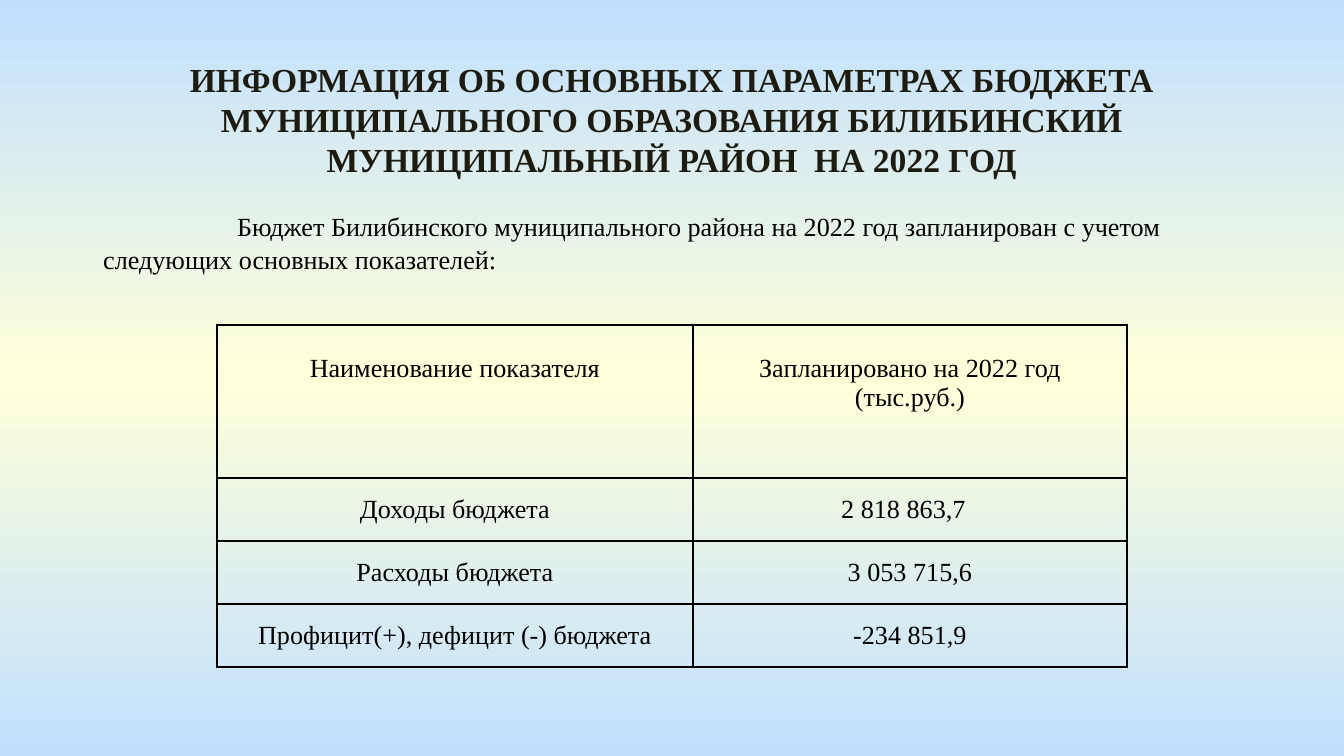
from collections import namedtuple
from dataclasses import dataclass

from lxml.etree import SubElement
from pptx import Presentation
from pptx.dml.color import RGBColor
from pptx.enum.shapes import MSO_SHAPE as Shape
from pptx.enum.text import MSO_ANCHOR as Anchor, PP_ALIGN as Align
from pptx.oxml.ns import qn
from pptx.util import Emu, Pt

Box = namedtuple("Box", "left top width height")


@dataclass(frozen=True)
class Theme:
    """Colours, font and type sizes of the deck."""
    font: str = "Times New Roman"
    sky: str = "C1E0FF"
    cream: str = "FFFFD9"
    title_ink: str = "1E1C11"
    ink: str = "000000"
    title_size: float = 18
    title_leading: float = 21.4
    body_size: float = 14
    body_leading: float = 17.5
    rule: float = 1


THEME = Theme()
EMU_PER_PX = 914400 / 134.4
TITLE = ("ИНФОРМАЦИЯ ОБ ОСНОВНЫХ ПАРАМЕТРАХ БЮДЖЕТА МУНИЦИПАЛЬНОГО ОБРАЗОВАНИЯ "
         "БИЛИБИНСКИЙ МУНИЦИПАЛЬНЫЙ РАЙОН  НА 2022 ГОД")
INTRO = ("Бюджет Билибинского муниципального района на 2022 год запланирован "
         "с учетом следующих основных показателей:")
ROWS = [
    ("Наименование показателя", "Запланировано на 2022 год (тыс.руб.)"),
    ("Доходы бюджета", "2 818 863,7"),
    ("Расходы бюджета", "3 053 715,6"),
    ("Профицит(+), дефицит (-) бюджета", "-234 851,9"),
]


def px(length):
    """Turn pixels into EMU."""
    return Emu(round(length * EMU_PER_PX))


def place(box):
    """Turn a pixel box into EMU arguments."""
    return [px(length) for length in box]


def write(frame, text, size, color, align, bold=False):
    """Put one styled paragraph into a text frame and return it."""
    frame.word_wrap = True
    para = frame.paragraphs[0]
    para.text = text
    para.alignment = align
    font = para.font
    font.name, font.size, font.bold = THEME.font, Pt(size), bold
    font.color.rgb = RGBColor.from_string(color)
    return para


def paint_background(page):
    """Fill the page with a vertical three-stop gradient."""
    fill = page.background.fill
    fill.gradient()
    fill.gradient_angle = 270
    stops = page.background._cSld.find(".//" + qn("a:gsLst"))
    for stop in list(stops):
        stops.remove(stop)
    for percent, color in ((0, THEME.sky), (50, THEME.cream), (100, THEME.sky)):
        stop = SubElement(stops, qn("a:gs"), pos=str(percent * 1000))
        SubElement(stop, qn("a:srgbClr"), val=color)


def add_title(page, box):
    """Add the centred heading."""
    frame = page.shapes.add_textbox(*place(box)).text_frame
    para = write(frame, TITLE, THEME.title_size, THEME.title_ink, Align.CENTER, True)
    para.line_spacing = Pt(THEME.title_leading)


def add_intro(page, box):
    """Add the introductory sentence on a panel filled with the page background."""
    panel = page.shapes.add_shape(Shape.RECTANGLE, *place(box))
    panel.shadow.inherit = False
    panel.line.fill.background()
    element = panel._element
    element.set("useBgFill", "1")
    element.remove(element.find(qn("p:style")))
    frame = panel.text_frame
    frame.vertical_anchor = Anchor.TOP
    frame.margin_top = px(13)
    para = write(frame, INTRO, THEME.body_size, THEME.ink, Align.LEFT)
    para.line_spacing = Pt(THEME.body_leading)
    para._p.get_or_add_pPr().set("indent", str(px(134)))


def rule_cell(cell):
    """Draw a solid rule on all four sides of a cell and clear its fill."""
    properties = cell._tc.get_or_add_tcPr()
    for side in ("lnL", "lnR", "lnT", "lnB"):
        line = SubElement(properties, qn("a:" + side), w=str(Pt(THEME.rule)))
        solid = SubElement(line, qn("a:solidFill"))
        SubElement(solid, qn("a:srgbClr"), val=THEME.ink)
    cell.fill.background()


def add_budget_table(page, box):
    """Add the table of planned budget figures."""
    table = page.shapes.add_table(len(ROWS), 2, *place(box)).table
    table.first_row = table.horz_banding = False
    first_column, header, row_height = 476, 153, 63
    table.columns[0].width = px(first_column)
    table.columns[1].width = px(box.width - first_column)
    for row, texts in enumerate(ROWS):
        table.rows[row].height = px(row_height if row else header)
        for column, text in enumerate(texts):
            cell = table.cell(row, column)
            cell.margin_left = cell.margin_right = px(0 if row and column else 9)
            cell.margin_top = px(0 if row else 29)
            cell.margin_bottom = 0
            cell.vertical_anchor = Anchor.MIDDLE if row else Anchor.TOP
            write(cell.text_frame, text, THEME.body_size, THEME.ink, Align.CENTER)
            rule_cell(cell)
    table.cell(1, 1).margin_right = px(13)


def main():
    """Build and save the deck."""
    deck = Presentation()
    deck.slide_width, deck.slide_height = px(1344), px(756)
    page = deck.slides.add_slide(deck.slide_layouts[6])
    paint_background(page)
    add_intro(page, Box(90, 196, 1175, 86))
    add_title(page, Box(47, 53, 1250, 136))
    add_budget_table(page, Box(217, 325, 910, 342))
    deck.save("out.pptx")


if __name__ == "__main__":
    main()
